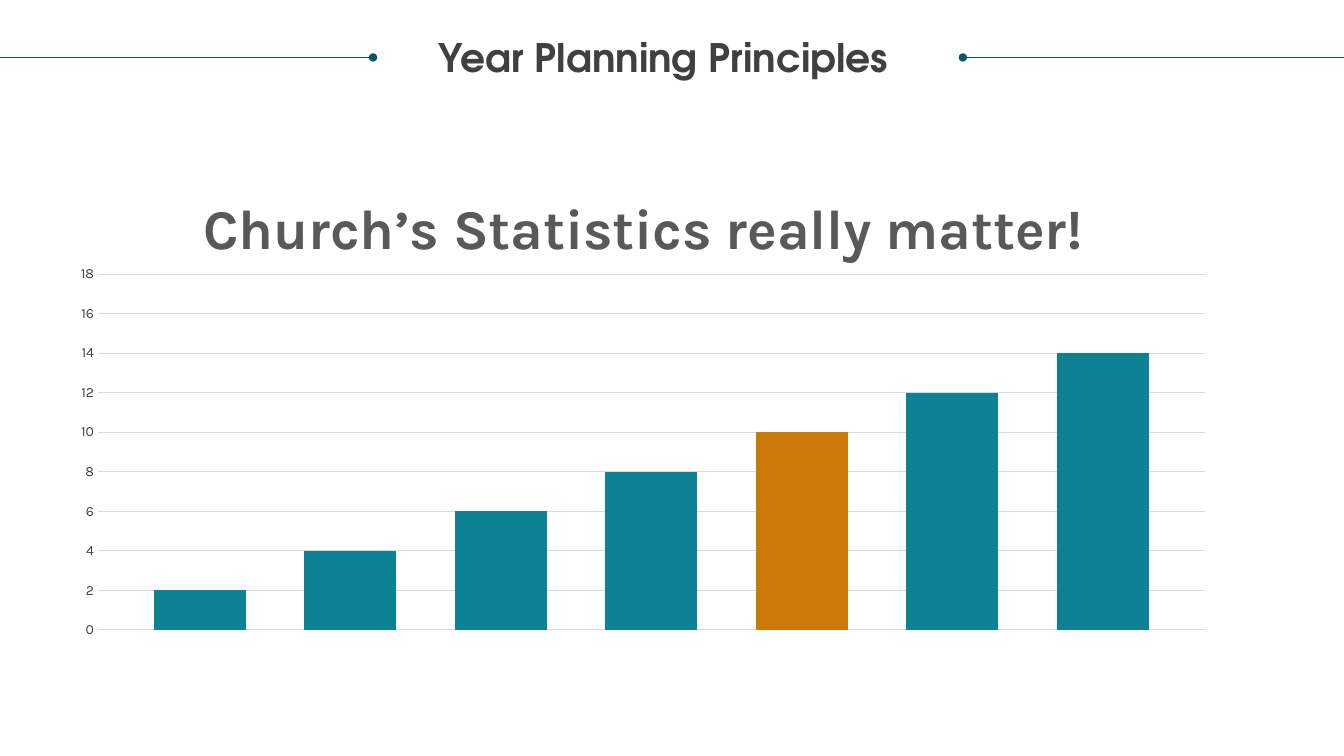
"""Build the year planning slide with its church statistics column chart."""
from lxml import etree
from pptx import Presentation
from pptx.chart.data import CategoryChartData
from pptx.dml.color import RGBColor
from pptx.enum.chart import XL_CHART_TYPE, XL_TICK_LABEL_POSITION, XL_TICK_MARK
from pptx.enum.shapes import MSO_CONNECTOR
from pptx.enum.text import PP_ALIGN
from pptx.oxml import parse_xml
from pptx.oxml.ns import nsdecls, qn
from pptx.util import Inches, Pt

COLORS = {
    "heading": "404040",
    "chart title": "595959",
    "rule": "085764",
    "grid": "D9D9D9",
    "column": "0D8295",
    "highlight": "CB7A09",
}


def color(name):
    return RGBColor.from_string(COLORS[name])


prs = Presentation()
prs.slide_width = Inches(13.33)
prs.slide_height = Inches(7.5)
slide = prs.slides.add_slide(prs.slide_layouts[6])

statistics = CategoryChartData()
statistics.categories = ["1"]
for number in range(1, 8):
    statistics.add_series(f"Series {number}", [2 * number])

chart_left, chart_top, chart_width, chart_height = 0.57, 1.65, 11.62, 4.78
chart = slide.shapes.add_chart(
    XL_CHART_TYPE.COLUMN_CLUSTERED,
    Inches(chart_left), Inches(chart_top),
    Inches(chart_width), Inches(chart_height), statistics,
).chart
chart.has_legend = False
chart.font.name = "Karla"
chart.font.size = Pt(10)

chart.has_title = True
chart.chart_title.include_in_layout = False
message = chart.chart_title.text_frame.paragraphs[0].add_run()
message.text = "Church’s Statistics really matter!"
message.font.name = "Karla"
message.font.size = Pt(40)
message.font.bold = True
message.font.color.rgb = color("chart title")

plot = chart.plots[0]
plot.vary_by_categories = False
plot.gap_width = 121
plot.overlap = -63
for series in plot.series:
    series.format.fill.solid()
    series.format.fill.fore_color.rgb = color(
        "highlight" if series.name == "Series 5" else "column"
    )

plot_fractions = {
    "x": (0.97 - chart_left) / chart_width,
    "y": (2.72 - chart_top) / chart_height,
    "w": 10.98 / chart_width,
    "h": 3.53 / chart_height,
}
plot_position = "".join(
    f'<c:{key} val="{value:.4f}"/>' for key, value in plot_fractions.items()
)
plot_area = chart._chartSpace.chart.plotArea
for layout in plot_area.findall(qn("c:layout")):
    plot_area.remove(layout)
plot_area.insert(0, parse_xml(
    f'<c:layout {nsdecls("c")}><c:manualLayout><c:layoutTarget val="inner"/>'
    f'<c:xMode val="edge"/><c:yMode val="edge"/>{plot_position}'
    "</c:manualLayout></c:layout>"
))

chart.category_axis.visible = False
scale = chart.value_axis
scale.minimum_scale = 0
scale.maximum_scale = 18
scale.major_unit = 2
scale.major_tick_mark = XL_TICK_MARK.NONE
scale.minor_tick_mark = XL_TICK_MARK.NONE
scale.tick_label_position = XL_TICK_LABEL_POSITION.NEXT_TO_AXIS
scale.tick_labels.font.name = "Karla"
scale.tick_labels.font.size = Pt(10)
scale.tick_labels.font.color.rgb = color("heading")
scale.format.line.fill.background()
scale.has_major_gridlines = True
scale.major_gridlines.format.line.color.rgb = color("grid")
scale.major_gridlines.format.line.width = Pt(0.75)

heading = slide.shapes.add_textbox(
    Inches(3.79), Inches(0.38), Inches(5.58), Inches(0.85)
).text_frame
heading.word_wrap = True
heading.margin_left = heading.margin_right = 0
heading.margin_top = heading.margin_bottom = 0
heading_line = heading.paragraphs[0]
heading_line.alignment = PP_ALIGN.CENTER
heading_line.line_spacing = 0.9
heading_text = heading_line.add_run()
heading_text.text = "Year Planning Principles"
heading_text.font.name = "TeX Gyre Adventor"
heading_text.font.size = Pt(28)
heading_text.font.bold = True
heading_text.font.color.rgb = color("heading")

for start, end, dot in [(0, 3.7, "tailEnd"), (9.55, 13.33, "headEnd")]:
    rule = slide.shapes.add_connector(
        MSO_CONNECTOR.STRAIGHT, Inches(start), Inches(0.57), Inches(end), Inches(0.57)
    )
    rule.line.color.rgb = color("rule")
    rule.line.width = Pt(0.5)
    properties = rule._element.spPr
    etree.SubElement(properties.find(qn("a:ln")), qn(f"a:{dot}"), type="oval")
    etree.SubElement(properties, qn("a:effectLst"))

prs.save("out.pptx")
